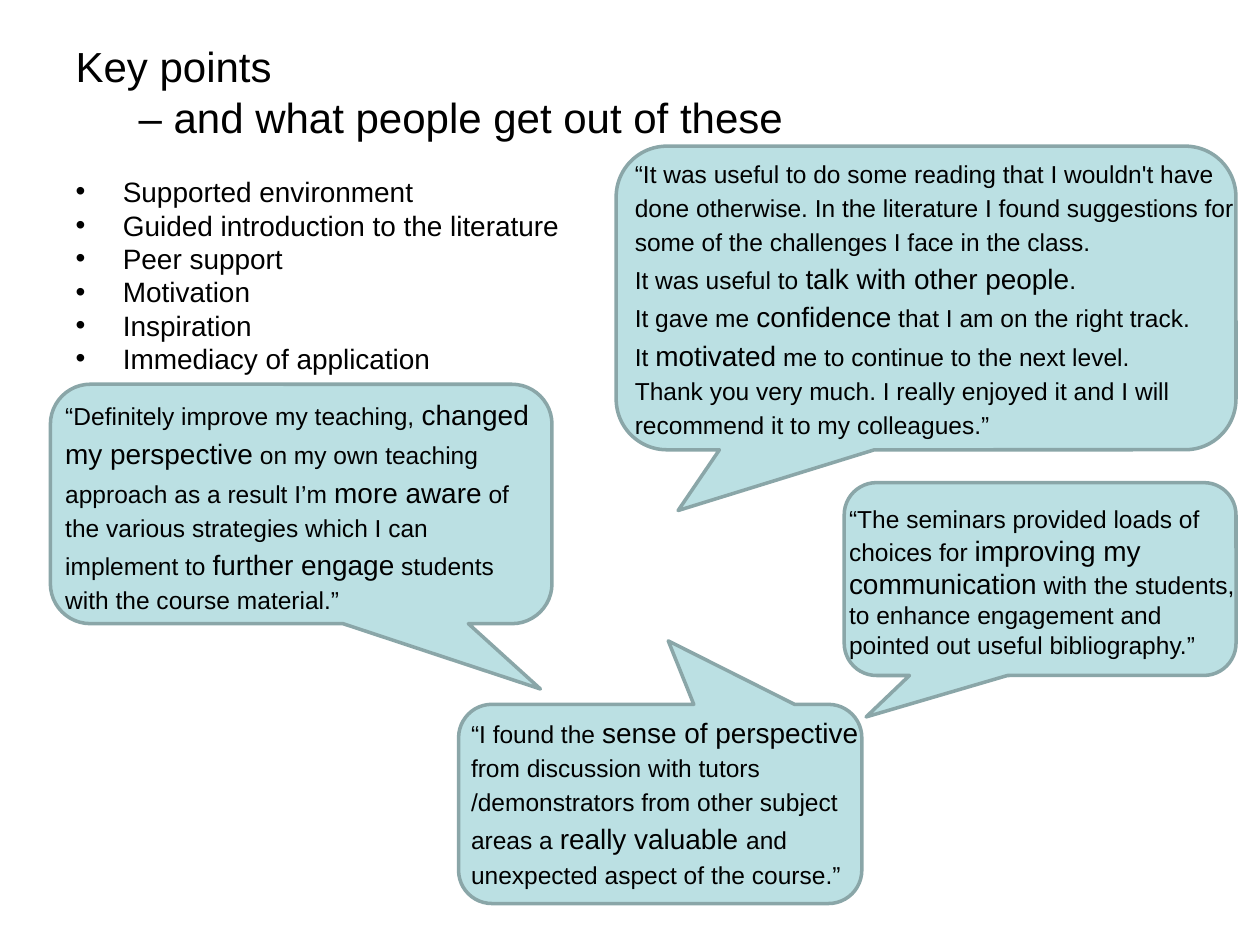
"""Build the slide of key points with four participant quotes in speech bubbles."""
from lxml import etree
from pptx import Presentation
from pptx.dml.color import RGBColor
from pptx.enum.shapes import MSO_SHAPE as Shape
from pptx.enum.text import MSO_ANCHOR as Anchor, MSO_AUTO_SIZE as AutoSize, PP_ALIGN as Align
from pptx.oxml.ns import qn
from pptx.util import Pt

BLACK = RGBColor(0x00, 0x00, 0x00)
BUBBLE_FILL = RGBColor(0xBB, 0xE0, 0xE3)
BUBBLE_LINE = RGBColor(0x8A, 0xA6, 0xA8)
PLAIN_SIZE, STRONG_SIZE = 14, 16

KEY_POINTS = [
    "Supported environment",
    "Guided introduction to the literature",
    "Peer support",
    "Motivation",
    "Inspiration",
    "Immediacy of application",
]

QUOTES = [
    ((28.8, 219.6, 286.6, 136.8), (0.477, 0.773), (30.2, 221, 286.6, 135.4), 1.15, [
        ["“Definitely improve my teaching, ", "changed my perspective",
         " on my own teaching approach as a result I’m ", "more aware",
         " of the various strategies which I can implement to ", "further engage",
         " students with the course material.”"],
    ]),
    ((482.4, 275.8, 223.9, 110.2), (-0.444, 0.715), (478.1, 284.4, 238.3, 97.2), 1.0, [
        ["“The seminars provided loads of choices for ", "improving my communication",
         " with the students, to enhance engagement and pointed out useful bibliography.”"],
    ]),
    ((352.1, 83.5, 354.2, 173.5), (-0.4, 0.7), (355.7, 85, 360, 196.6), 1.15, [
        ["“It was useful to do some reading that I wouldn't have done otherwise. "
         "In the literature I found suggestions for some of the challenges I face in the class."],
        ["It was useful to ", "talk with other people", "."],
        ["It gave me ", "confidence", " that I am on the right track."],
        ["It ", "motivated", " me to continue to the next level."],
        ["Thank you very much. I really enjoyed it and I will recommend it to my colleagues.”"],
    ]),
    ((262.1, 402.5, 230.4, 113.8), (0.02, -0.819), (262.1, 402.5, 241.9, 110.2), 1.15, [
        ["“I found the ", "sense of perspective ",
         "from discussion with tutors /demonstrators from other subject areas a ",
         "really valuable ", "and unexpected aspect of the course.”"],
    ]),
]


def add_run(paragraph, text, size):
    run = paragraph.add_run()
    run.text = text
    run.font.name = "Arial"
    run.font.size = Pt(size)
    run.font.color.rgb = BLACK


def place(placeholder, left, top, width, height, anchor):
    placeholder.left, placeholder.top = Pt(left), Pt(top)
    placeholder.width, placeholder.height = Pt(width), Pt(height)
    placeholder.text_frame.auto_size = AutoSize.NONE
    placeholder.text_frame.vertical_anchor = anchor


prs = Presentation()
prs.slide_width, prs.slide_height = Pt(720), Pt(540)
slide = prs.slides.add_slide(prs.slide_layouts[1])

title = slide.shapes.title
place(title, 36, 21.6, 494, 61.2, Anchor.MIDDLE)
heading = title.text_frame.paragraphs[0]
heading.alignment = Align.LEFT
add_run(heading, "Key points", 24)
heading.add_line_break()
add_run(heading, "\t– and what people get out of these", 24)

points = slide.placeholders[1]
place(points, 36, 100, 648, 410.4, Anchor.TOP)
for index, point in enumerate(KEY_POINTS):
    frame = points.text_frame
    item = frame.add_paragraph() if index else frame.paragraphs[0]
    props = item._p.get_or_add_pPr()
    props.set("marL", str(Pt(27)))
    props.set("indent", str(Pt(-27)))
    etree.SubElement(props, qn("a:buChar")).set("char", "•")
    item.line_spacing = 0.8
    item.space_before = Pt(3.7 if index else 0)
    add_run(item, point, 16)

for bubble_box, tail_tip, quote_box, spacing, paragraphs in QUOTES:
    group = slide.shapes.add_group_shape()
    bubble = group.shapes.add_shape(Shape.ROUNDED_RECTANGULAR_CALLOUT, *map(Pt, bubble_box))
    bubble.adjustments[0], bubble.adjustments[1] = tail_tip
    bubble.adjustments[2] = 0.167
    bubble.shadow.inherit = False
    bubble.fill.solid()
    bubble.fill.fore_color.rgb = BUBBLE_FILL
    bubble.line.color.rgb = BUBBLE_LINE
    bubble.line.width = Pt(2)

    quote = group.shapes.add_textbox(*map(Pt, quote_box)).text_frame
    quote.word_wrap = True
    quote.auto_size = AutoSize.SHAPE_TO_FIT_TEXT
    for index, parts in enumerate(paragraphs):
        sentence = quote.add_paragraph() if index else quote.paragraphs[0]
        sentence.line_spacing = spacing
        for position, part in enumerate(parts):
            add_run(sentence, part, STRONG_SIZE if position % 2 else PLAIN_SIZE)

prs.save("out.pptx")
